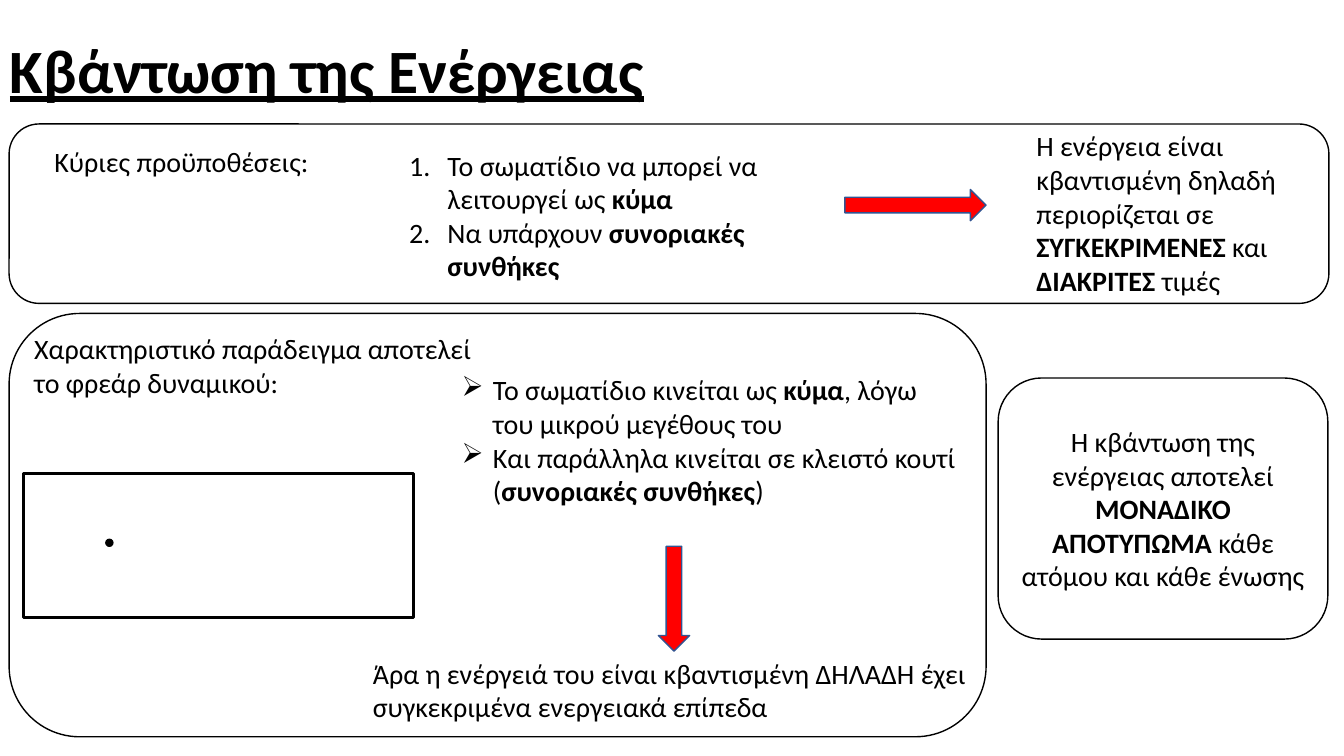
from dataclasses import dataclass

import pptx
import pptx.dml.color
import pptx.enum.shapes
import pptx.enum.text
import pptx.oxml
import pptx.oxml.ns
import pptx.util
from pptx.util import Inches

SHAPE = pptx.enum.shapes.MSO_SHAPE
ANCHOR = pptx.enum.text.MSO_ANCHOR
ALIGN = pptx.enum.text.PP_ALIGN
BLACK, WHITE, RED, ARROW_EDGE = "000000", "FFFFFF", "FF0000", "325491"
NUMBERED = '<a:buAutoNum {} type="arabicPeriod"/>'
ARROWHEAD = '<a:buChar {} char="➢"/>'


@dataclass
class Figure:
    kind: int
    box: tuple[float, float, float, float]
    fill: str | None = None
    line: str = BLACK
    width: float = 1


@dataclass
class Passage:
    """Paragraphs of text; ** switches bold on and off."""
    box: tuple[float, float, float, float]
    paragraphs: list[str]
    size: float = 20
    anchor: int = ANCHOR.TOP
    spacing: float = 1.0
    underline: bool = False
    bullet: str = ""
    indent: float = 0


def color(value: str) -> pptx.dml.color.RGBColor:
    return pptx.dml.color.RGBColor.from_string(value)


def write(frame, paragraphs: list[str], size: float = 20, underline: bool = False,
          align: int = ALIGN.LEFT, spacing: float = 1.0,
          bullet: str = "", indent: float = 0) -> None:
    frame.word_wrap = True
    for index, text in enumerate(paragraphs):
        paragraph = frame.paragraphs[0] if index == 0 else frame.add_paragraph()
        paragraph.alignment = align
        paragraph.line_spacing = spacing
        if bullet:
            properties = paragraph._p.get_or_add_pPr()
            properties.set("marL", str(Inches(indent)))
            properties.set("indent", str(-Inches(indent)))
            properties.append(pptx.oxml.parse_xml(bullet.format(pptx.oxml.ns.nsdecls("a"))))
        for part, words in enumerate(text.split("**")):
            if not words:
                continue
            run = paragraph.add_run()
            run.text = words
            formats = {"name": "Calibri", "size": pptx.util.Pt(size),
                       "bold": part % 2 == 1, "underline": underline}
            for name, value in formats.items():
                setattr(run.font, name, value)
            run.font.color.rgb = color(BLACK)


def draw_figure(slide, figure: Figure):
    shape = slide.shapes.add_shape(figure.kind, *map(Inches, figure.box))
    shape.shadow.inherit = False
    if figure.fill:
        shape.fill.solid()
        shape.fill.fore_color.rgb = color(figure.fill)
    else:
        shape.fill.background()
    shape.line.color.rgb = color(figure.line)
    shape.line.width = pptx.util.Pt(figure.width)
    return shape


def draw_passage(slide, passage: Passage) -> None:
    frame = slide.shapes.add_textbox(*map(Inches, passage.box)).text_frame
    frame.vertical_anchor = passage.anchor
    write(frame, passage.paragraphs, passage.size, passage.underline,
          spacing=passage.spacing, bullet=passage.bullet, indent=passage.indent)


FIGURES = [
    # Frames of the conditions and of the example
    Figure(SHAPE.ROUNDED_RECTANGLE, (0.09, 1.23, 13.09, 1.78)),
    Figure(SHAPE.ROUNDED_RECTANGLE, (0.09, 3.11, 9.69, 4.2)),
    # Arrows to the conclusions
    Figure(SHAPE.RIGHT_ARROW, (8.38, 1.88, 1.4, 0.31), RED, ARROW_EDGE),
    Figure(SHAPE.DOWN_ARROW, (6.53, 5.42, 0.31, 1.04), RED, ARROW_EDGE),
    # Particle in the closed box
    Figure(SHAPE.RECTANGLE, (0.23, 4.7, 3.87, 1.43), WHITE, width=2.25),
    Figure(SHAPE.OVAL, (1.05, 5.35, 0.07, 0.07), BLACK),
]

PASSAGES = [
    Passage((0, 0, 11.5, 1.45), ["**Κβάντωση της Ενέργειας**"], size=44,
            anchor=ANCHOR.MIDDLE, spacing=0.9, underline=True),
    # Conditions and their result
    Passage((0.44, 1.42, 3.65, 0.62), ["Κύριες προϋποθέσεις:"], spacing=0.9),
    Passage((3.96, 1.42, 4.41, 1.45),
            ["Το σωματίδιο να μπορεί να λειτουργεί ως **κύμα**",
             "Να υπάρχουν **συνοριακές συνθήκες**"], bullet=NUMBERED, indent=0.38),
    Passage((10.18, 1.23, 3, 1.78),
            ["Η ενέργεια είναι κβαντισμένη δηλαδή περιορίζεται σε "
             "**ΣΥΓΚΕΚΡΙΜΕΝΕΣ** και **ΔΙΑΚΡΙΤΕΣ **τιμές"]),
    # Example of the potential well
    Passage((0.24, 3.24, 4.62, 0.77),
            ["Χαρακτηριστικό παράδειγμα αποτελεί το φρεάρ δυναμικού:"]),
    Passage((4.48, 3.65, 5.15, 1.45),
            ["Το σωματίδιο κινείται ως **κύμα**, λόγω του μικρού μεγέθους του",
             "Και παράλληλα κινείται σε κλειστό κουτί (**συνοριακές συνθήκες**)"],
            bullet=ARROWHEAD, indent=0.31),
    Passage((3.6, 6.46, 6.17, 0.77),
            ["Άρα η ενέργειά του είναι κβαντισμένη ΔΗΛΑΔΗ έχει "
             "συγκεκριμένα ενεργειακά επίπεδα"]),
]


def main() -> None:
    deck = pptx.Presentation()
    deck.slide_width, deck.slide_height = Inches(13.33), Inches(7.5)
    slide = deck.slides.add_slide(deck.slide_layouts[6])
    for figure in FIGURES:
        draw_figure(slide, figure)
    for passage in PASSAGES:
        draw_passage(slide, passage)

    # Fingerprint of every atom
    fingerprint = draw_figure(
        slide, Figure(SHAPE.ROUNDED_RECTANGLE, (9.9, 3.75, 3.27, 2.59), WHITE))
    fingerprint.text_frame.vertical_anchor = ANCHOR.MIDDLE
    write(fingerprint.text_frame,
          ["Η κβάντωση της ενέργειας αποτελεί **ΜΟΝΑΔΙΚΟ ΑΠΟΤΥΠΩΜΑ **"
           "κάθε ατόμου και κάθε ένωσης"], align=ALIGN.CENTER)
    deck.save("out.pptx")


if __name__ == "__main__":
    main()
